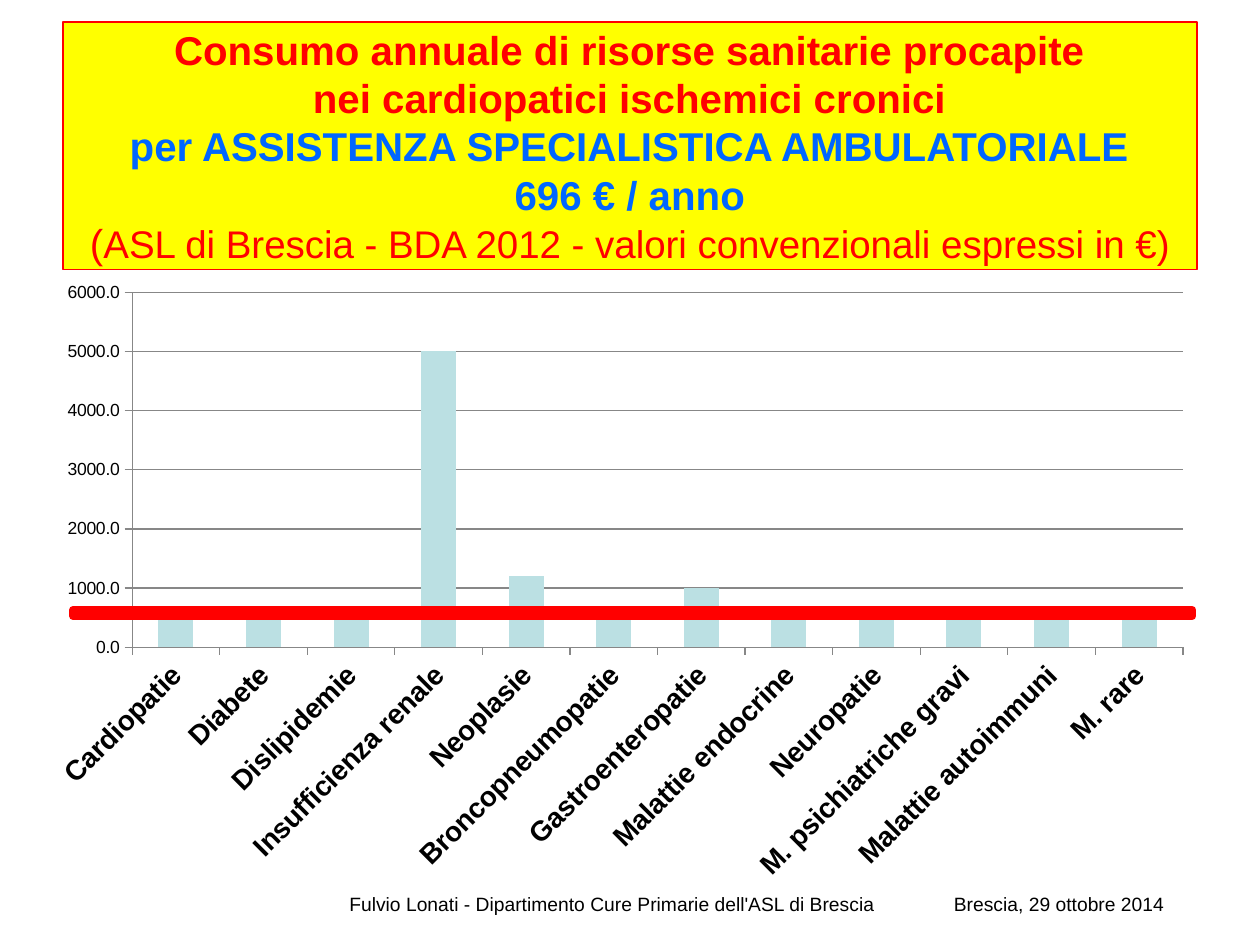
import pptx
import pptx.chart.data
import pptx.dml.color
import pptx.enum.chart
import pptx.enum.shapes
import pptx.enum.text
import pptx.oxml
import pptx.oxml.ns
import pptx.util

Pt = pptx.util.Pt
RGBColor = pptx.dml.color.RGBColor

FONT = "Arial"
RED = RGBColor(0xFF, 0x00, 0x00)
YELLOW = RGBColor(0xFF, 0xFF, 0x00)
BLUE = RGBColor(0x00, 0x66, 0xFF)
BLACK = RGBColor(0x00, 0x00, 0x00)
GRAY = RGBColor(0x87, 0x87, 0x87)
BAR_COLOR = RGBColor(0xBB, 0xE0, 0xE3)

TITLE_SPANS = [
    ("Consumo annuale di risorse sanitarie procapite\v"
     "nei cardiopatici ischemici cronici\v", dict(size=23, color=RED, bold=True)),
    ("per ASSISTENZA SPECIALISTICA AMBULATORIALE\v"
     "696 € / anno\v", dict(size=23, color=BLUE, bold=True)),
    ("(", dict(size=23, color=RED)),
    ("ASL di Brescia - BDA 2012 - valori convenzionali espressi in €)",
     dict(size=22, color=RED)),
]
COSTS = {
    "Cardiopatie": 700,
    "Diabete": 700,
    "Dislipidemie": 700,
    "Insufficienza renale": 5000,
    "Neoplasie": 1200,
    "Broncopneumopatie": 600,
    "Gastroenteropatie": 1000,
    "Malattie endocrine": 600,
    "Neuropatie": 600,
    "M. psichiatriche gravi": 500,
    "Malattie autoimmuni": 600,
    "M. rare": 600,
}
FOOTER = "Fulvio Lonati - Dipartimento Cure Primarie dell'ASL di Brescia\tBrescia, 29 ottobre 2014"
DATE_TAB = 345.5

# left, top, width, height in points; the plot is measured from the chart's corner
TITLE_AREA = (36, 12.5, 648, 141.6)
CHART_AREA = (29.5, 149, 657.5, 360)
PLOT_AREA = (46, 18, 600.5, 203)
MEAN_AREA = (41.8, 348.5, 639.6, 3.6)
FOOTER_AREA = (192.5, 506.5, 492, 23)


def in_points(area):
    return [Pt(length) for length in area]


def set_font(font, size, color=BLACK, bold=False):
    font.name = FONT
    font.size = Pt(size)
    font.bold = bold
    font.color.rgb = color


def add_text(para, text, **text_format):
    """Add text to a paragraph; each vertical tab becomes a line break."""
    for index, line in enumerate(text.split("\v")):
        if index:
            para.add_line_break()
        if line:
            span = para.add_run()
            span.text = line
            set_font(span.font, **text_format)


def add_title(page):
    box = page.shapes.title
    box.left, box.top, box.width, box.height = in_points(TITLE_AREA)
    box.fill.solid()
    box.fill.fore_color.rgb = YELLOW
    box.line.color.rgb = RED
    box.line.width = Pt(0.75)
    frame = box.text_frame
    frame.auto_size = pptx.enum.text.MSO_AUTO_SIZE.NONE
    frame.word_wrap = True
    frame.vertical_anchor = pptx.enum.text.MSO_ANCHOR.MIDDLE
    para = frame.paragraphs[0]
    para.alignment = pptx.enum.text.PP_ALIGN.CENTER
    para.line_spacing = 1.0
    for text, text_format in TITLE_SPANS:
        add_text(para, text, **text_format)


def place_plot(chart):
    """Fix the inner plot area, given to the chart as fractions of its size."""
    plot_area = chart._chartSpace.chart.plotArea
    for layout in plot_area.findall(pptx.oxml.ns.qn("c:layout")):
        plot_area.remove(layout)
    chart_size = CHART_AREA[2:] * 2
    lengths = "".join(
        f'<c:{name} val="{length / whole}"/>'
        for name, length, whole in zip("xywh", PLOT_AREA, chart_size))
    plot_area.insert(0, pptx.oxml.parse_xml(
        f'<c:layout {pptx.oxml.ns.nsdecls("c")}><c:manualLayout>'
        '<c:layoutTarget val="inner"/><c:xMode val="edge"/><c:yMode val="edge"/>'
        f'{lengths}</c:manualLayout></c:layout>'))


def add_cost_chart(page):
    data = pptx.chart.data.CategoryChartData()
    data.categories = list(COSTS)
    data.add_series("Series 1", list(COSTS.values()))
    chart = page.shapes.add_chart(
        pptx.enum.chart.XL_CHART_TYPE.COLUMN_CLUSTERED, *in_points(CHART_AREA), data).chart
    chart.has_title = False
    chart.has_legend = False
    set_font(chart.font, 10)
    place_plot(chart)

    plot = chart.plots[0]
    plot.gap_width = 150
    plot.vary_by_categories = False
    bars = plot.series[0].format.fill
    bars.solid()
    bars.fore_color.rgb = BAR_COLOR

    categories, values = chart.category_axis, chart.value_axis
    for axis, size, bold in ((categories, 16, True), (values, 10, False)):
        axis.major_tick_mark = pptx.enum.chart.XL_TICK_MARK.OUTSIDE
        axis.minor_tick_mark = pptx.enum.chart.XL_TICK_MARK.NONE
        axis.format.line.color.rgb = GRAY
        set_font(axis.tick_labels.font, size, bold=bold)
    body = categories._element.find(
        f"{pptx.oxml.ns.qn('c:txPr')}/{pptx.oxml.ns.qn('a:bodyPr')}")
    body.set("rot", "-2700000")
    body.set("vert", "horz")
    values.minimum_scale, values.maximum_scale, values.major_unit = 0, 6000, 1000
    values.tick_labels.number_format = "0.0"
    values.tick_labels.number_format_is_linked = False
    values.has_major_gridlines = True
    values.major_gridlines.format.line.color.rgb = GRAY


def add_mean_line(page):
    mean = page.shapes.add_shape(
        pptx.enum.shapes.MSO_SHAPE.RECTANGLE, *in_points(MEAN_AREA))
    mean.shadow.inherit = False
    mean.fill.background()
    mean.line.color.rgb = RED
    mean.line.width = Pt(4.5)


def add_footer(page):
    frame = page.shapes.add_textbox(*in_points(FOOTER_AREA)).text_frame
    frame.word_wrap = True
    para = frame.paragraphs[0]
    tabs = pptx.oxml.parse_xml(
        f'<a:tabLst {pptx.oxml.ns.nsdecls("a")}>'
        f'<a:tab pos="{int(Pt(DATE_TAB))}" algn="l"/></a:tabLst>')
    para._p.get_or_add_pPr().append(tabs)
    add_text(para, FOOTER, size=11)


def main():
    deck = pptx.Presentation()
    deck.slide_width, deck.slide_height = Pt(720), Pt(540)
    page = deck.slides.add_slide(deck.slide_layouts.get_by_name("Title Only"))
    add_title(page)
    add_cost_chart(page)
    add_mean_line(page)
    add_footer(page)
    deck.save("out.pptx")


if __name__ == "__main__":
    main()
